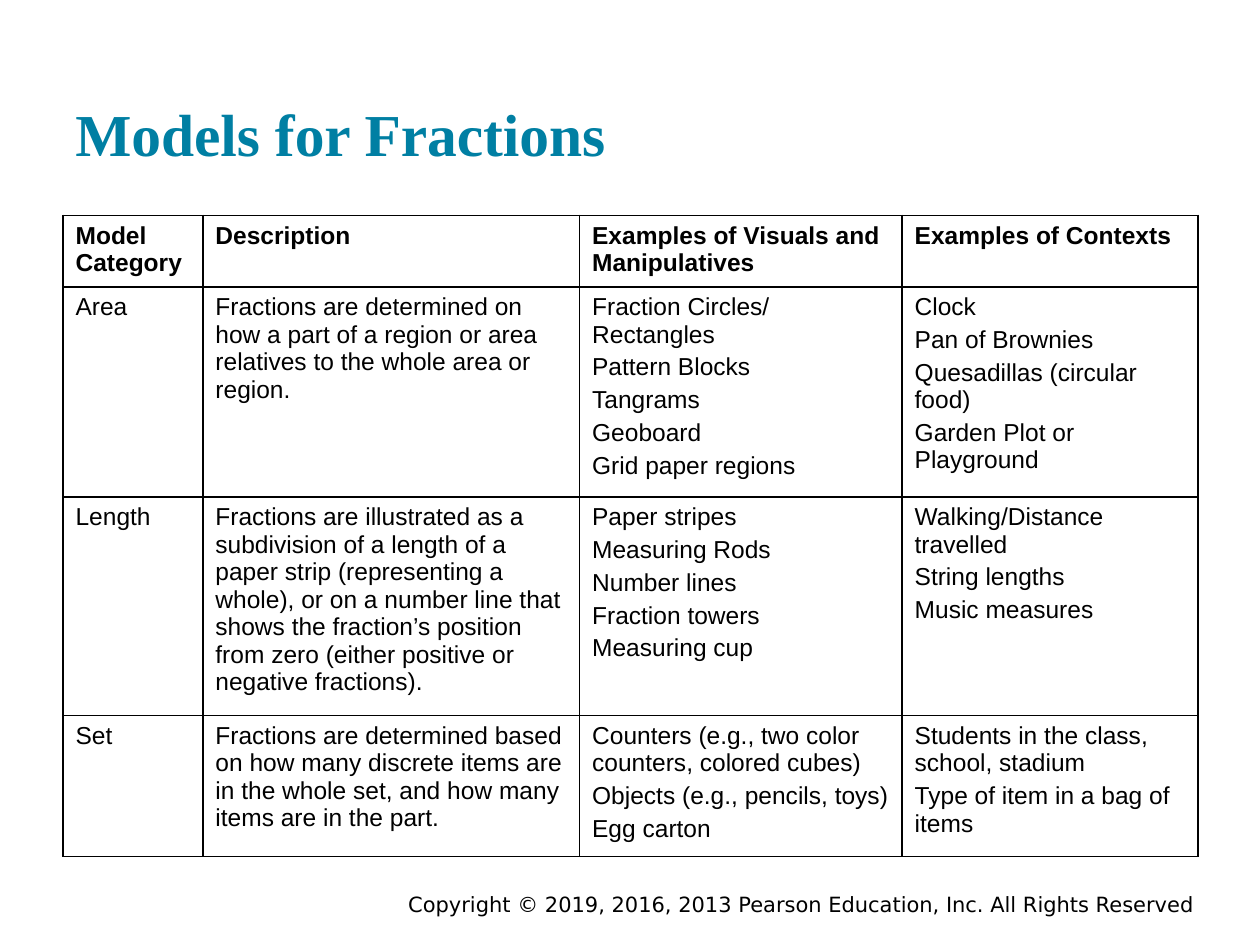
import pptx
import pptx.dml.color
import pptx.enum.text
import pptx.oxml
import pptx.oxml.ns
import pptx.util
from pptx.util import Inches

ANCHOR = pptx.enum.text.MSO_ANCHOR
ALIGN = pptx.enum.text.PP_ALIGN
BLACK, TEAL, WHITE = "000000", "007FA3", "FFFFFF"

COLUMN_WIDTHS = [1.11, 2.99, 2.56, 2.35]
ROW_HEIGHTS = [0.54, 1.58, 1.63, 1.07]
ROWS = [
    [["Model Category"], ["Description"],
     ["Examples of Visuals and Manipulatives"], ["Examples of Contexts"]],
    [["Area"],
     ["Fractions are determined on how a part of a region or area relatives "
      "to the whole area or region."],
     ["Fraction Circles/ Rectangles", "Pattern Blocks", "Tangrams",
      "Geoboard", "Grid paper regions"],
     ["Clock", "Pan of Brownies", "Quesadillas (circular food)",
      "Garden Plot or Playground"]],
    [["Length"],
     ["Fractions are illustrated as a subdivision of a length of a paper "
      "strip (representing a whole), or on a number line that shows the "
      "fraction’s position from zero (either positive or negative fractions)."],
     ["Paper stripes", "Measuring Rods", "Number lines", "Fraction towers",
      "Measuring cup"],
     ["Walking/Distance travelled", "String lengths", "Music measures"]],
    [["Set"],
     ["Fractions are determined based on how many discrete items are in the "
      "whole set, and how many items are in the part."],
     ["Counters (e.g., two color counters, colored cubes)",
      "Objects (e.g., pencils, toys)", "Egg carton"],
     ["Students in the class, school, stadium",
      "Type of item in a bag of items"]],
]


def color(value):
    return pptx.dml.color.RGBColor.from_string(value)


def add_run(para, text, font, size, fill, bold=False):
    span = para.add_run()
    span.text = text
    span.font.name = font
    span.font.size = pptx.util.Pt(size)
    span.font.bold = bold
    span.font.color.rgb = color(fill)


def add_line(page, box, text, font, size, fill, bold, align, anchor, inset):
    """Place one line of text, with equal top and bottom insets."""
    frame = page.shapes.add_textbox(*map(Inches, box)).text_frame
    frame.word_wrap = True
    frame.vertical_anchor = anchor
    frame.margin_top = frame.margin_bottom = Inches(inset)
    frame.paragraphs[0].alignment = align
    add_run(frame.paragraphs[0], text, font, size, fill, bold)


def add_title(page, box):
    add_line(page, box, "Models for Fractions", "Times New Roman", 34, TEAL,
             True, ALIGN.LEFT, ANCHOR.BOTTOM, 0.1)


def add_footer(page, box):
    add_line(page, box, "Copyright © 2019, 2016, 2013 Pearson Education, Inc. "
             "All Rights Reserved", "DejaVu Sans", 12, BLACK,
             False, ALIGN.RIGHT, ANCHOR.MIDDLE, 0)


def set_borders(cell):
    properties = cell._tc.get_or_add_tcPr()
    for position, side in enumerate(("lnL", "lnR", "lnT", "lnB")):
        properties.insert(position, pptx.oxml.parse_xml(
            f'<a:{side} {pptx.oxml.ns.nsdecls("a")} w="{pptx.util.Pt(1)}">'
            f'<a:solidFill><a:srgbClr val="{BLACK}"/></a:solidFill></a:{side}>'))


def fill_cell(cell, lines, bold):
    cell.fill.solid()
    cell.fill.fore_color.rgb = color(WHITE)
    set_borders(cell)
    frame = cell.text_frame
    for number, text in enumerate(lines):
        para = frame.add_paragraph() if number else frame.paragraphs[0]
        if number:
            para.space_before = pptx.util.Pt(3)
        add_run(para, text, "Arial", 14, BLACK, bold)


def add_models_table(page, box):
    table = page.shapes.add_table(len(ROWS), len(COLUMN_WIDTHS),
                                  *map(Inches, box)).table
    for column, width in zip(table.columns, COLUMN_WIDTHS):
        column.width = Inches(width)
    for row, height in zip(table.rows, ROW_HEIGHTS):
        row.height = Inches(height)
    for r, row in enumerate(ROWS):
        for c, lines in enumerate(row):
            fill_cell(table.cell(r, c), lines, bold=r == 0)


def main():
    deck = pptx.Presentation()
    deck.slide_width, deck.slide_height = Inches(10), Inches(7.5)
    page = deck.slides.add_slide(deck.slide_layouts[6])
    add_footer(page, (2.92, 7.05, 6.66, 0.25))
    add_title(page, (0.5, 0.24, 9, 1.2))
    add_models_table(page, (0.5, 1.71, sum(COLUMN_WIDTHS), sum(ROW_HEIGHTS)))
    deck.save("out.pptx")


if __name__ == "__main__":
    main()
